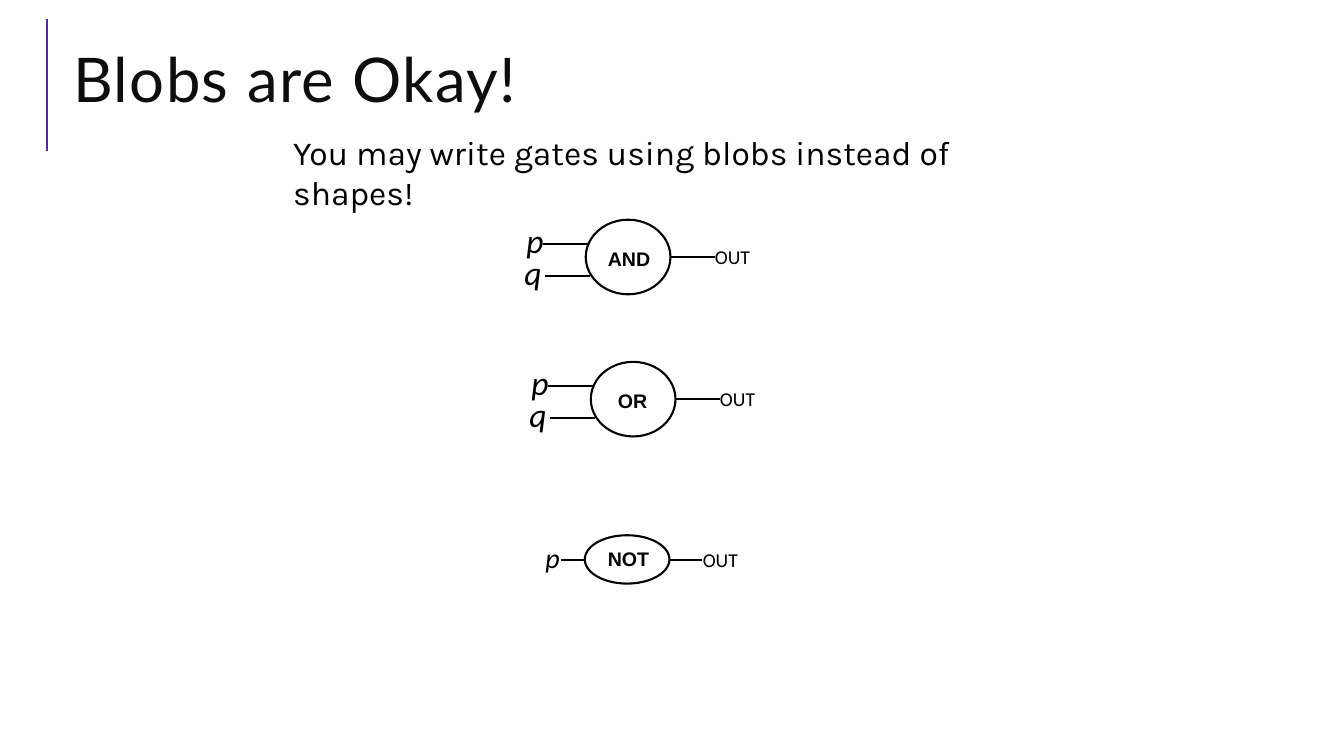
from pptx import Presentation
from pptx import util as u
from pptx.dml.color import RGBColor
from pptx.enum import shapes, text
from pptx.oxml.ns import qn
from lxml import etree

BLACK, WHITE, PURPLE, TITLE_INK = "000000", "FFFFFF", "4C3282", "0D0D0D"
TIGHT = {"margin_left": 0.02, "margin_right": 0.02, "margin_top": 0.03, "margin_bottom": 0.03}
INPUT = {"name": "Calibri", "italic": True}
OUTPUT = {"name": "Calibri", "size": u.Pt(14)}
GATE_NAME = {"name": "Arial", "size": u.Pt(14), "bold": True}


def colour(value):
    """Turn a hex string into a colour."""
    return RGBColor.from_string(value)


def add_wire(slide, start, end, ink=BLACK):
    """Draw a plain straight line between two points."""
    points = [u.Inches(v) for v in (*start, *end)]
    wire = slide.shapes.add_connector(shapes.MSO_CONNECTOR.STRAIGHT, *points)
    wire.line.color.rgb = colour(ink)
    wire.line.width = u.Pt(1.5)
    etree.SubElement(wire._element.spPr, qn("a:effectLst"))


def add_blob(slide, box):
    """Draw the white oval that stands for a gate."""
    blob = slide.shapes.add_shape(shapes.MSO_SHAPE.OVAL, *map(u.Inches, box))
    blob.shadow.inherit = False
    blob.fill.solid()
    blob.fill.fore_color.rgb = colour(WHITE)
    blob.line.color.rgb = colour(BLACK)
    blob.line.width = u.Pt(1.5)


def add_label(slide, words, box, font, ink=BLACK, wrap=False, margins=None, grow=False):
    """Place one paragraph of text and return its frame and run."""
    frame = slide.shapes.add_textbox(*map(u.Inches, box)).text_frame
    frame.word_wrap = wrap
    if grow:
        frame.auto_size = text.MSO_AUTO_SIZE.SHAPE_TO_FIT_TEXT
    for side, inset in (margins or {}).items():
        setattr(frame, side, u.Inches(inset))
    run = frame.paragraphs[0].add_run()
    run.text = words
    for key, value in font.items():
        setattr(run.font, key, value)
    run.font.color.rgb = colour(ink)
    return frame, run


def add_title(slide, words):
    """Place the slide title beside its purple rule."""
    add_wire(slide, (0.47, 1.5), (0.47, 0.19), PURPLE)
    font = {"name": "Lato", "size": u.Pt(44)}
    frame, run = add_label(slide, words, (0.63, 0.29, 12.23, 1.11), font, TITLE_INK, wrap=True)
    frame.vertical_anchor = text.MSO_ANCHOR.MIDDLE
    frame.paragraphs[0].line_spacing = 0.8
    run._r.get_or_add_rPr().set("spc", "100")


def add_output(slide, x, y):
    """Label the wire that leaves a gate."""
    add_label(slide, "OUT", (x, y, 0.42, 0.65), OUTPUT, margins=TIGHT)


def add_two_input_gate(slide, name, x, y, name_left, name_width):
    """Draw a gate with inputs p and q, its oval starting at x, y."""
    add_blob(slide, (x, y, 0.84, 0.74))
    inputs = (("p", -0.61, -0.03, 0.38, -0.42), ("q", -0.63, 0.29, 0.31, -0.4))
    for letter, left, top, width, wire_left in inputs:
        add_label(slide, letter, (x + left, y + top, width, 0.65),
                  {**INPUT, "size": u.Pt(24)}, margins=TIGHT)
        wire_y = y + top + 0.27
        add_wire(slide, (x + wire_left, wire_y), (x + wire_left + 0.44, wire_y))
    add_wire(slide, (x + 0.84, y + 0.37), (x + 1.28, y + 0.37))
    add_output(slide, x + 1.26, y + 0.22)
    add_label(slide, name, (name_left, y + 0.22, name_width, 0.34), GATE_NAME, grow=True)


def add_not_gate(slide):
    """Draw the gate with a single input."""
    add_wire(slide, (5.56, 5.56), (6.96, 5.56))
    add_blob(slide, (5.8, 5.31, 0.84, 0.48))
    add_label(slide, "p", (5.31, 5.31, 0.34, 0.44), {**INPUT, "size": u.Pt(20)}, grow=True)
    add_output(slide, 6.95, 5.41)
    add_label(slide, "NOT", (5.93, 5.38, 0.62, 0.34), GATE_NAME, grow=True)


def main():
    """Build the slide and save it."""
    deck = Presentation()
    deck.slide_width, deck.slide_height = u.Inches(13.33), u.Inches(7.5)
    slide = deck.slides.add_slide(deck.slide_layouts[6])
    add_title(slide, "Blobs are Okay!")
    add_not_gate(slide)
    add_two_input_gate(slide, "AND", 5.81, 2.18, 5.93, 0.63)
    add_two_input_gate(slide, "OR", 5.86, 3.59, 6.03, 0.5)
    add_label(slide, "You may write gates using blobs instead of shapes!",
              (2.81, 1.26, 7.53, 0.5), {"name": "Karla", "size": u.Pt(24)}, wrap=True, grow=True)
    deck.save("out.pptx")


if __name__ == "__main__":
    main()
